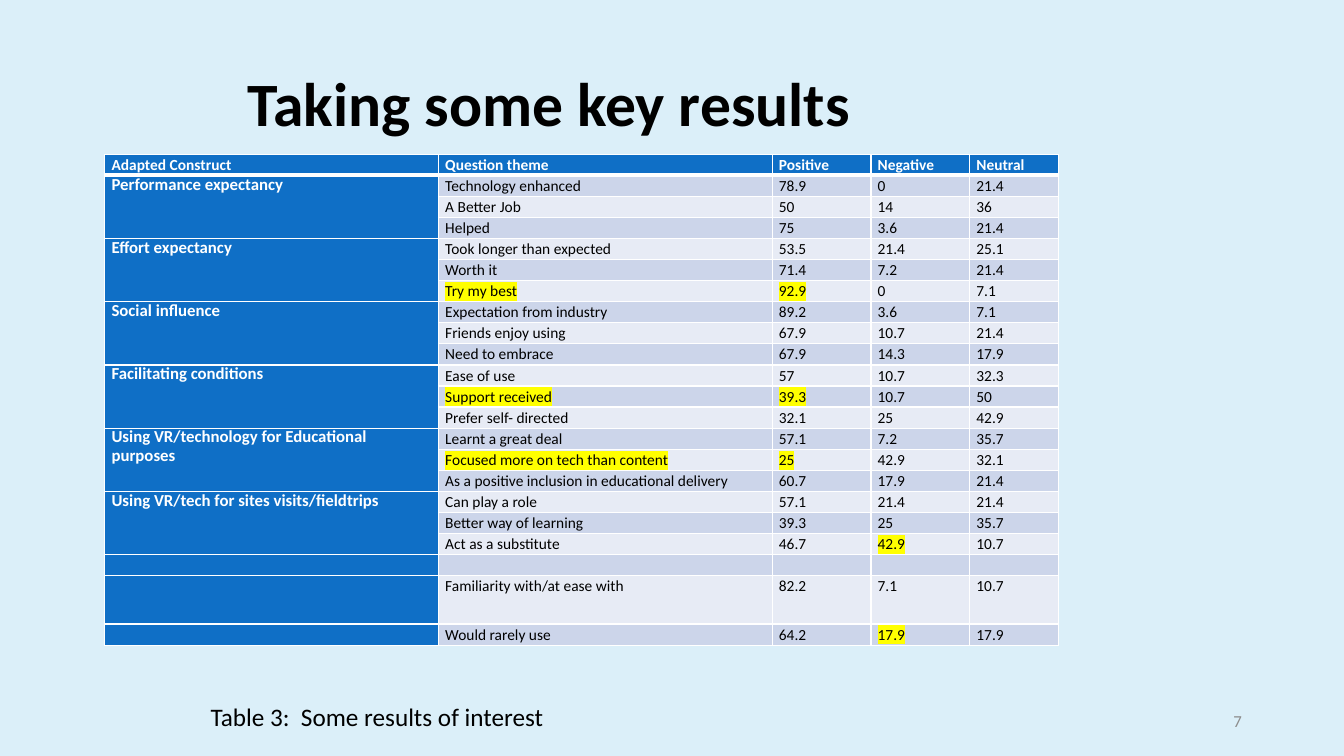
from dataclasses import dataclass
from typing import NamedTuple

from lxml.etree import SubElement
from pptx import Presentation
from pptx.dml.color import RGBColor as RGB
from pptx.enum.text import MSO_ANCHOR as Anchor, PP_ALIGN as Align
from pptx.oxml.ns import qn
from pptx.util import Inches, Length, Pt


@dataclass(frozen=True)
class Theme:
    font: str = "Calibri"
    background: str = "DBEFF9"
    text: str = "000000"
    number: str = "8C8C8C"
    head: str = "0F6FC6"
    bands: tuple[str, str] = ("E7EBF5", "CCD5EA")
    white: str = "FFFFFF"
    highlight: str = "FFFF00"
    title_size: float = 44
    caption_size: float = 18
    construct_size: float = 12
    cell_size: float = 11
    number_size: float = 12
    border: float = 1
    head_border: float = 3


class Box(NamedTuple):
    """Left, top, width and height in percent of the slide."""
    x: float
    y: float
    w: float
    h: float


class Style(NamedTuple):
    size: float
    color: str
    bold: bool = False
    spacing: float = 1.0
    align: Align = Align.LEFT


class Label(NamedTuple):
    text: str
    box: Box
    style: Style
    anchor: Anchor


class Answer(NamedTuple):
    """One table row; marked holds the highlighted columns."""
    theme: str
    positive: str
    negative: str
    neutral: str
    marked: tuple[int, ...] = ()


class Construct(NamedTuple):
    name: str
    answers: list[Answer]


T = Theme()
SLIDE_W, SLIDE_H = Inches(13.33), Inches(7.5)
TABLE_X, TABLE_Y = 7.8, 20.4
COLUMNS = (24.83, 24.83, 7.35, 7.35, 6.6)
ROW, TALL_ROW = 2.79, 6.4
TALL_THEME = "Familiarity with/at ease with"
INSET = 0.5

HEAD_STYLE = Style(T.cell_size, T.white, True, 1.07)
CONSTRUCT_STYLE = Style(T.construct_size, T.white, True, 0.9)
ANSWER_STYLE = Style(T.cell_size, T.text, False, 1.07)

LABELS = [
    Label("Taking some key results", Box(17.7, 5.33, 75.38, 17.47),
          Style(T.title_size, T.text, True, 0.9), Anchor.MIDDLE),
    Label("Table 3:  Some results of interest", Box(14.93, 92.13, 43.58, 5.33),
          Style(T.caption_size, T.text), Anchor.TOP),
    Label("7", Box(70.65, 92.67, 22.5, 5.33),
          Style(T.number_size, T.number, align=Align.RIGHT), Anchor.MIDDLE),
]

HEADINGS = ("Adapted Construct", "Question theme", "Positive", "Negative", "Neutral")
CONSTRUCTS = [
    Construct("Performance expectancy", [
        Answer("Technology enhanced", "78.9", "0", "21.4"),
        Answer("A Better Job", "50", "14", "36"),
        Answer("Helped", "75", "3.6", "21.4")]),
    Construct("Effort expectancy", [
        Answer("Took longer than expected", "53.5", "21.4", "25.1"),
        Answer("Worth it", "71.4", "7.2", "21.4"),
        Answer("Try my best", "92.9", "0", "7.1", (1, 2))]),
    Construct("Social influence", [
        Answer("Expectation from industry", "89.2", "3.6", "7.1"),
        Answer("Friends enjoy using", "67.9", "10.7", "21.4"),
        Answer("Need to embrace", "67.9", "14.3", "17.9")]),
    Construct("Facilitating conditions", [
        Answer("Ease of use", "57", "10.7", "32.3"),
        Answer("Support received", "39.3", "10.7", "50", (1, 2)),
        Answer("Prefer self- directed", "32.1", "25", "42.9")]),
    Construct("Using VR/technology for Educational purposes", [
        Answer("Learnt a great deal", "57.1", "7.2", "35.7"),
        Answer("Focused more on tech than content", "25", "42.9", "32.1", (1, 2)),
        Answer("As a positive inclusion in educational delivery", "60.7", "17.9", "21.4")]),
    Construct("Using VR/tech for sites visits/fieldtrips", [
        Answer("Can play a role", "57.1", "21.4", "21.4"),
        Answer("Better way of learning", "39.3", "25", "35.7"),
        Answer("Act as a substitute", "46.7", "42.9", "10.7", (3,))]),
    Construct("", [Answer("", "", "", "")]),
    Construct("", [Answer(TALL_THEME, "82.2", "7.1", "10.7")]),
    Construct("", [Answer("Would rarely use", "64.2", "17.9", "17.9", (3,))]),
]


def across(percent: float) -> Length:
    return Length(round(SLIDE_W * percent / 100))


def down(percent: float) -> Length:
    return Length(round(SLIDE_H * percent / 100))


def write(p, text: str, style: Style, marked: bool = False) -> None:
    p.alignment, p.line_spacing = style.align, style.spacing
    p.font.name, p.font.size, p.font.bold = T.font, Pt(style.size), style.bold
    p.font.color.rgb = RGB.from_string(style.color)
    if not text:
        # An empty paragraph takes its height from its end mark.
        SubElement(p._p, qn("a:endParaRPr"), sz=str(round(style.size * 100)))
        return
    r = p.add_run()
    r.text = text
    if marked:
        mark = SubElement(r._r.get_or_add_rPr(), qn("a:highlight"))
        SubElement(mark, qn("a:srgbClr"), val=T.highlight)


def draw_label(s, label: Label) -> None:
    x, y, w, h = label.box
    tf = s.shapes.add_textbox(across(x), down(y), across(w), down(h)).text_frame
    tf.word_wrap, tf.vertical_anchor = True, label.anchor
    write(tf.paragraphs[0], label.text, label.style)


def fill_cell(cell, row: int, text: str, style: Style, fill: str,
              marked: bool = False) -> None:
    cell.margin_left = cell.margin_right = across(INSET)
    cell.margin_top = cell.margin_bottom = 0
    write(cell.text_frame.paragraphs[0], text, style, marked)
    pr = cell._tc.get_or_add_tcPr()
    heavy = {0: "lnB", 1: "lnT"}.get(row)
    for side in ("lnL", "lnR", "lnT", "lnB"):
        width = T.head_border if side == heavy else T.border
        line = SubElement(pr, qn(f"a:{side}"), w=str(Pt(width)))
        SubElement(SubElement(line, qn("a:solidFill")), qn("a:srgbClr"), val=T.white)
    cell.fill.solid()
    cell.fill.fore_color.rgb = RGB.from_string(fill)


def draw_table(s) -> None:
    answers = [a for construct in CONSTRUCTS for a in construct.answers]
    heights = [ROW] + [TALL_ROW if a.theme == TALL_THEME else ROW for a in answers]
    table = s.shapes.add_table(len(heights), len(COLUMNS), across(TABLE_X), down(TABLE_Y),
                               across(sum(COLUMNS)), down(sum(heights))).table
    for column, width in zip(table.columns, COLUMNS):
        column.width = across(width)
    for row, height in zip(table.rows, heights):
        row.height = down(height)

    for c, heading in enumerate(HEADINGS):
        fill_cell(table.cell(0, c), 0, heading, HEAD_STYLE, T.head)
    row = 1
    for construct in CONSTRUCTS:
        first, last = row, row + len(construct.answers) - 1
        for answer in construct.answers:
            name = construct.name if row == first else ""
            style = CONSTRUCT_STYLE if name else HEAD_STYLE
            fill_cell(table.cell(row, 0), row, name, style, T.head)
            for c, text in enumerate(answer[:4], start=1):
                fill_cell(table.cell(row, c), row, text, ANSWER_STYLE,
                          T.bands[row % 2], c in answer.marked)
            row += 1
        if last > first:
            table.cell(first, 0).merge(table.cell(last, 0))


def main() -> None:
    prs = Presentation()
    prs.slide_width, prs.slide_height = SLIDE_W, SLIDE_H
    s = prs.slides.add_slide(prs.slide_layouts[6])
    s.background.fill.solid()
    s.background.fill.fore_color.rgb = RGB.from_string(T.background)
    draw_table(s)
    for label in LABELS:
        draw_label(s, label)
    prs.save("out.pptx")


if __name__ == "__main__":
    main()
